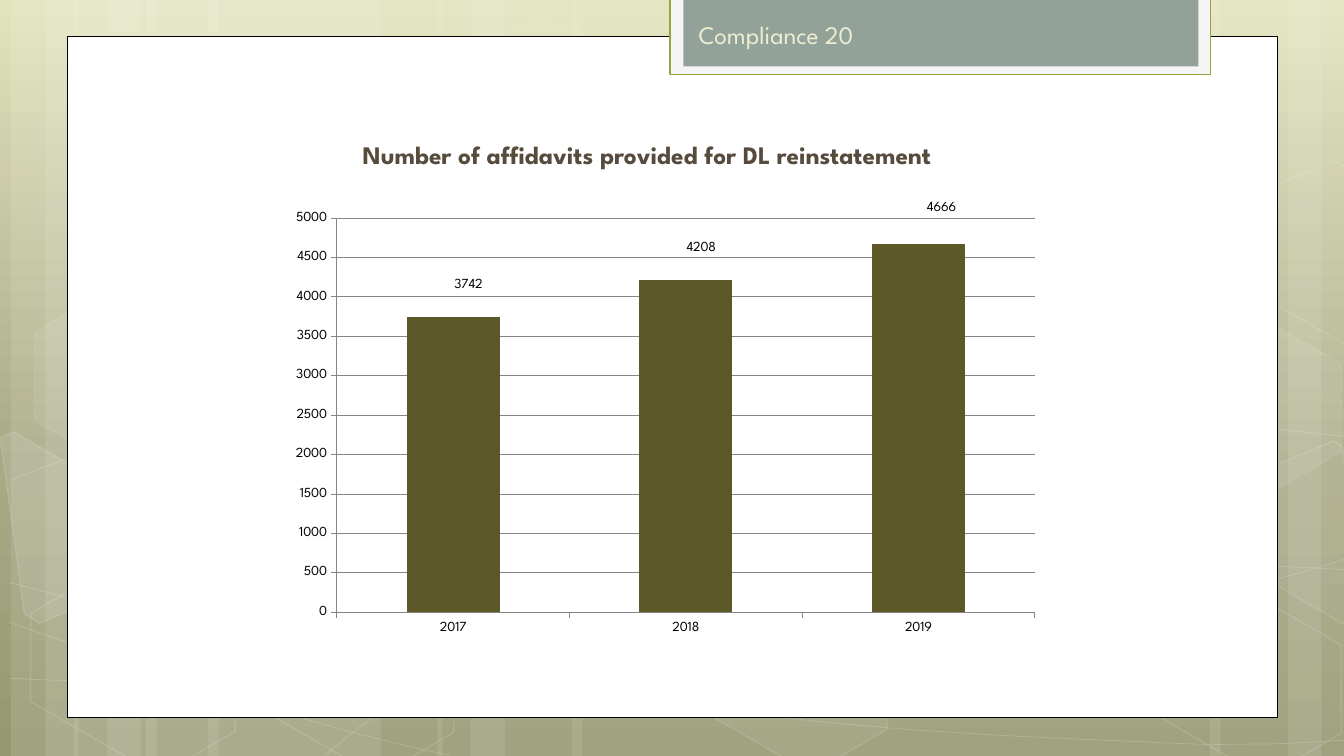
from copy import deepcopy
from dataclasses import dataclass
from math import cos, radians, sin
from typing import Any
from lxml import etree
from pptx import Presentation
from pptx.chart.data import CategoryChartData
from pptx.dml.color import RGBColor
from pptx.enum.chart import XL_CHART_TYPE, XL_LABEL_POSITION, XL_TICK_MARK
from pptx.enum.shapes import MSO_SHAPE
from pptx.enum.text import MSO_ANCHOR, MSO_AUTO_SIZE, PP_ALIGN
from pptx.oxml.ns import qn
from pptx.util import Inches, Pt

RECTANGLE, HEXAGON = MSO_SHAPE.RECTANGLE, MSO_SHAPE.HEXAGON
COLUMNS = XL_CHART_TYPE.COLUMN_CLUSTERED
OUTSIDE_END, TICK_OUT = XL_LABEL_POSITION.OUTSIDE_END, XL_TICK_MARK.OUTSIDE
BOTTOM, TOP, LEFT = MSO_ANCHOR.BOTTOM, MSO_ANCHOR.TOP, PP_ALIGN.LEFT
FIXED, GROW = MSO_AUTO_SIZE.NONE, MSO_AUTO_SIZE.SHAPE_TO_FIT_TEXT
FONT, WHITE = "League Spartan", "FFFFFF"
Point = tuple[float, float]

@dataclass
class Paint:
    color: str
    alpha: int = 100
    width: float = 0

@dataclass
class Block:
    at: tuple[float, float, float, float]
    fill: Paint | None = None
    line: Paint | None = None
    kind: Any = RECTANGLE
    turn: float = 0

@dataclass
class CutHexagon:
    pivot: Point
    corners: list[Point]
    fill: Paint | None = None

FAINT, SOFT, THREAD = Paint(WHITE, 8, 1), Paint(WHITE, 12, 1), Paint(WHITE, 20, 0.5)
STRIPES = [(1.45, 2.33), (0.11, 0.67), (0.45, 1.11), (2.06, 2.33), (0.73, 0.67), (1.06, 1.11),
           (9.78, 2.33), (12.78, 0.67), (12, 1.11), (5.67, 4.11), (4.34, 0.67), (4.67, 1.11)]
CURVES = [
    [(0.1, 6.73), (0.82, 6.76), (1.54, 6.79), (2.54, 6.78), (3.54, 6.77), (4.77, 6.75), (6.1, 6.65),
     (7.44, 6.55), (9.33, 6.36), (10.55, 6.17), (11.78, 5.98), (13.03, 5.68), (13.43, 5.51)],
    [(0.1, 4.77), (0.48, 4.61), (0.86, 4.46), (1.62, 4.31), (2.38, 4.16), (3.45, 3.94), (4.63, 3.87),
     (5.82, 3.8), (7.25, 3.79), (8.72, 3.87), (10.19, 3.95), (12.63, 4.26), (13.43, 4.34)],
    [(0.08, 6.17), (1.69, 6.72), (3.3, 7.27), (4.46, 7.49)],
    [(0.1, 5.78), (0.51, 5.89), (0.93, 6), (1.71, 6.16), (2.48, 6.31), (3.64, 6.56), (4.75, 6.73),
     (5.86, 6.9), (7.27, 7.08), (8.37, 7.18), (9.48, 7.29), (10.66, 7.33), (11.37, 7.36),
     (12.07, 7.4), (12.25, 7.38), (12.6, 7.38), (12.94, 7.37), (13.19, 7.35), (13.43, 7.34)],
    [(3.23, 7.49), (3.47, 7.29), (3.7, 7.09), (4.03, 6.91), (4.35, 6.73), (4.8, 6.53), (5.17, 6.39),
     (5.54, 6.25), (5.77, 6.19), (6.26, 6.09), (6.75, 5.99), (7.65, 5.85), (8.11, 5.78),
     (8.58, 5.71), (8.65, 5.71), (9.07, 5.69), (9.48, 5.66), (10.13, 5.63), (10.59, 5.62),
     (11.05, 5.61), (11.82, 5.62), (11.82, 5.62), (11.82, 5.62), (12.7, 5.62), (12.7, 5.62),
     (12.95, 5.63), (13.17, 5.64), (13.29, 5.65), (13.41, 5.66), (13.37, 5.65), (13.41, 5.66)],
]
HEXAGONS = [(4.45, 0.36, 4, FAINT), (6.62, 5.89, 6, SOFT)]
LEFT_HEXAGONS = [(0.15, 5.91, 0, SOFT), (0.19, 3.12, 7, FAINT), (2.32, 5.92, 0, SOFT)]
RIGHT_HEXAGONS = [(11.12, 5.93, 0, SOFT), (11.12, 3.14, 7, FAINT)]
LEFT_CUT = [CutHexagon((0.48, 5.35), [(0, 4.34), (0.13, 4.28), (1.15, 4.87), (1.27, 5.81), (0.39, 6.18),
                                      (0.24, 6.09)], Paint(WHITE, 10))]
RIGHT_CUTS = [
    CutHexagon((13.14, 5.2), [(12.35, 4.74), (13.23, 4.37), (13.32, 4.43), (13.57, 6.25), (13.49, 6.28),
                              (12.47, 5.69)], Paint(WHITE, 4)),
    CutHexagon((13.14, 2.41), [(12.35, 1.96), (13.23, 1.59), (13.34, 1.65), (13.57, 3.46), (13.49, 3.5),
                               (12.47, 2.91)]),
]
FRAMES = [
    Block((0.67, 0.36, 12, 6.76), Paint(WHITE), Paint("000000", 100, 0.5)),
    Block((6.65, -0.02, 5.36, 0.76), Paint("F5F5F5"), Paint("9DA03F", 100, 1.25)),
    Block((6.78, -0.02, 5.11, 0.68), Paint("93A299")),
]
LABEL_SHIFTS = [(0.02, -0.05), (0.02, -0.05), (0.03, -0.06)]

def rgb(color: str) -> RGBColor:
    return RGBColor.from_string(color)

def assign(target: Any, values: dict[str, Any]) -> None:
    for name, value in values.items():
        setattr(target, name, value)

def apply_paint(fill: Any, element: Any, paint: Paint | None) -> None:
    if paint is None:
        fill.background()
        return
    fill.solid()
    fill.fore_color.rgb = rgb(paint.color)
    if paint.alpha < 100:
        color = element.find(qn("a:solidFill")).find(qn("a:srgbClr"))
        etree.SubElement(color, qn("a:alpha"), val=str(paint.alpha * 1000))

def finish(shape: Any, fill: Paint | None, line: Paint | None) -> None:
    shape.shadow.inherit = False
    properties = shape._element.spPr
    apply_paint(shape.fill, properties, fill)
    apply_paint(shape.line.fill, properties.get_or_add_ln(), line)
    if line:
        shape.line.width = Pt(line.width)

def draw_block(page: Any, block: Block) -> None:
    shape = page.shapes.add_shape(block.kind, *map(Inches, block.at))
    shape.rotation = block.turn
    if block.kind == HEXAGON:
        shape.adjustments[0] = 0.285
    finish(shape, block.fill, block.line)

def draw_hexagons(page: Any, hexagons: list[tuple[float, float, int, Paint]]) -> None:
    for left, top, alpha, line in hexagons:
        fill = Paint(WHITE, alpha) if alpha else None
        draw_block(page, Block((left, top, 2.34, 1.52), fill, line, HEXAGON, 30))

def draw_outline(page: Any, points: list[Point], closed: bool) -> Any:
    grid = [(x * 1000, y * 1000) for x, y in points]
    builder = page.shapes.build_freeform(*grid[0], scale=Inches(1) / 1000)
    builder.add_line_segments(grid[1:], close=closed)
    return builder.convert_to_shape()

def draw_curve(page: Any, knots: list[Point]) -> None:
    shape = draw_outline(page, knots, False)
    outline = shape._element.find(".//" + qn("a:path"))
    lines = outline.findall(qn("a:lnTo"))
    for start in range(0, len(lines), 3):
        bend = etree.SubElement(outline, qn("a:cubicBezTo"))
        for line in lines[start:start + 3]:
            bend.append(line[0])
            outline.remove(line)
    finish(shape, None, THREAD)

def draw_cut_hexagon(page: Any, cut: CutHexagon) -> None:
    c, s = cos(radians(30)), sin(radians(30))
    px, py = cut.pivot
    level = [(px + (x - px) * c + (y - py) * s, py - (x - px) * s + (y - py) * c) for x, y in cut.corners]
    shape = draw_outline(page, level, True)
    shape.rotation = 30
    finish(shape, cut.fill, SOFT)

def paint_background(page: Any) -> None:
    fill = page.background.fill
    fill.gradient()
    fill.gradient_angle = 270
    stops = page._element.find(".//" + qn("a:gsLst"))
    stops.insert(1, deepcopy(stops[0]))
    for stop, (position, color) in zip(fill.gradient_stops, [(0, "E2E3BD"), (0.62, "A8A985"), (1, "969872")]):
        stop.position = position
        stop.color.rgb = rgb(color)

def write_text(box: Any, text: str, color: str, bold: bool, frame: dict[str, Any]) -> None:
    assign(box.text_frame, {"word_wrap": True, **frame})
    para = box.text_frame.paragraphs[0]
    para.alignment = LEFT
    span = para.add_run()
    span.text = text
    assign(span.font, {"name": FONT, "size": Pt(18), "bold": bold})
    span.font.color.rgb = rgb(color)

def set_layout(parent: Any, index: int, values: dict[str, Any]) -> None:
    for old in parent.findall(qn("c:layout")):
        parent.remove(old)
    layout = etree.Element(qn("c:layout"))
    manual = etree.SubElement(layout, qn("c:manualLayout"))
    for name, value in values.items():
        etree.SubElement(manual, qn("c:" + name), val=str(value))
    parent.insert(index, layout)

def draw_chart(page: Any) -> None:
    data = CategoryChartData()
    data.categories = ["2017", "2018", "2019"]
    data.add_series("Series 1", [3742, 4208, 4666])
    chart = page.shapes.add_chart(COLUMNS, *map(Inches, (2.81, 2, 7.61, 4.38)), data).chart
    assign(chart, {"has_legend": False, "has_title": False})
    assign(chart.font, {"name": FONT, "size": Pt(10)})
    chart.font.color.rgb = rgb("000000")
    set_layout(chart._chartSpace.chart.plotArea, 0, {"layoutTarget": "inner", "xMode": "edge", "yMode": "edge",
                                                     "x": 0.07, "y": 0.03, "w": 0.91, "h": 0.9})
    plot = chart.plots[0]
    assign(plot, {"gap_width": 150, "vary_by_categories": False})
    series = plot.series[0]
    apply_paint(series.format.fill, None, Paint("5C5827"))
    assign(series.data_labels, {"show_value": True, "position": OUTSIDE_END})
    for index, (x, y) in enumerate(LABEL_SHIFTS):
        series.points[index].data_label.position = OUTSIDE_END
        set_layout(series._element.findall(".//" + qn("c:dLbl"))[index], 1, {"x": x, "y": y})
    for leader in series._element.iter(qn("c:showLeaderLines")):
        leader.set("val", "0")
    values = chart.value_axis
    assign(values, {"minimum_scale": 0, "maximum_scale": 5000, "major_unit": 500, "has_major_gridlines": True})
    for axis in (chart.category_axis, values):
        axis.major_tick_mark = TICK_OUT
    for item in (chart.category_axis, values, values.major_gridlines):
        item.format.line.width = Pt(0.75)
        item.format.line.color.rgb = rgb("868686")

def main() -> None:
    deck = Presentation()
    assign(deck, {"slide_width": Inches(40 / 3), "slide_height": Inches(7.5)})
    page = deck.slides.add_slide(deck.slide_layouts[5])
    paint_background(page)
    for left, width in STRIPES:
        draw_block(page, Block((left, 0, width, 7.5), Paint(WHITE, 10)))
    for knots in CURVES:
        draw_curve(page, knots)
    draw_hexagons(page, HEXAGONS)
    for cuts, hexagons in ((LEFT_CUT, LEFT_HEXAGONS + RIGHT_HEXAGONS), (RIGHT_CUTS, [])):
        for cut in cuts:
            draw_cut_hexagon(page, cut)
        draw_hexagons(page, hexagons)
    for frame in FRAMES:
        draw_block(page, frame)
    title = page.shapes.title
    page.shapes._spTree.append(title._element)
    assign(title, dict(zip(("left", "top", "width", "height"), map(Inches, (6.83, 0.08, 3.67, 0.46)))))
    write_text(title, "Compliance 20", "ECEDD1", False, {"vertical_anchor": BOTTOM, "auto_size": FIXED})
    draw_chart(page)
    heading = page.shapes.add_textbox(*map(Inches, (3.5, 1.33, 6.92, 0.4)))
    write_text(heading, "Number of affidavits provided for DL reinstatement", "564B3C", True,
               {"vertical_anchor": TOP, "auto_size": GROW})
    deck.save("out.pptx")

if __name__ == "__main__":
    main()
